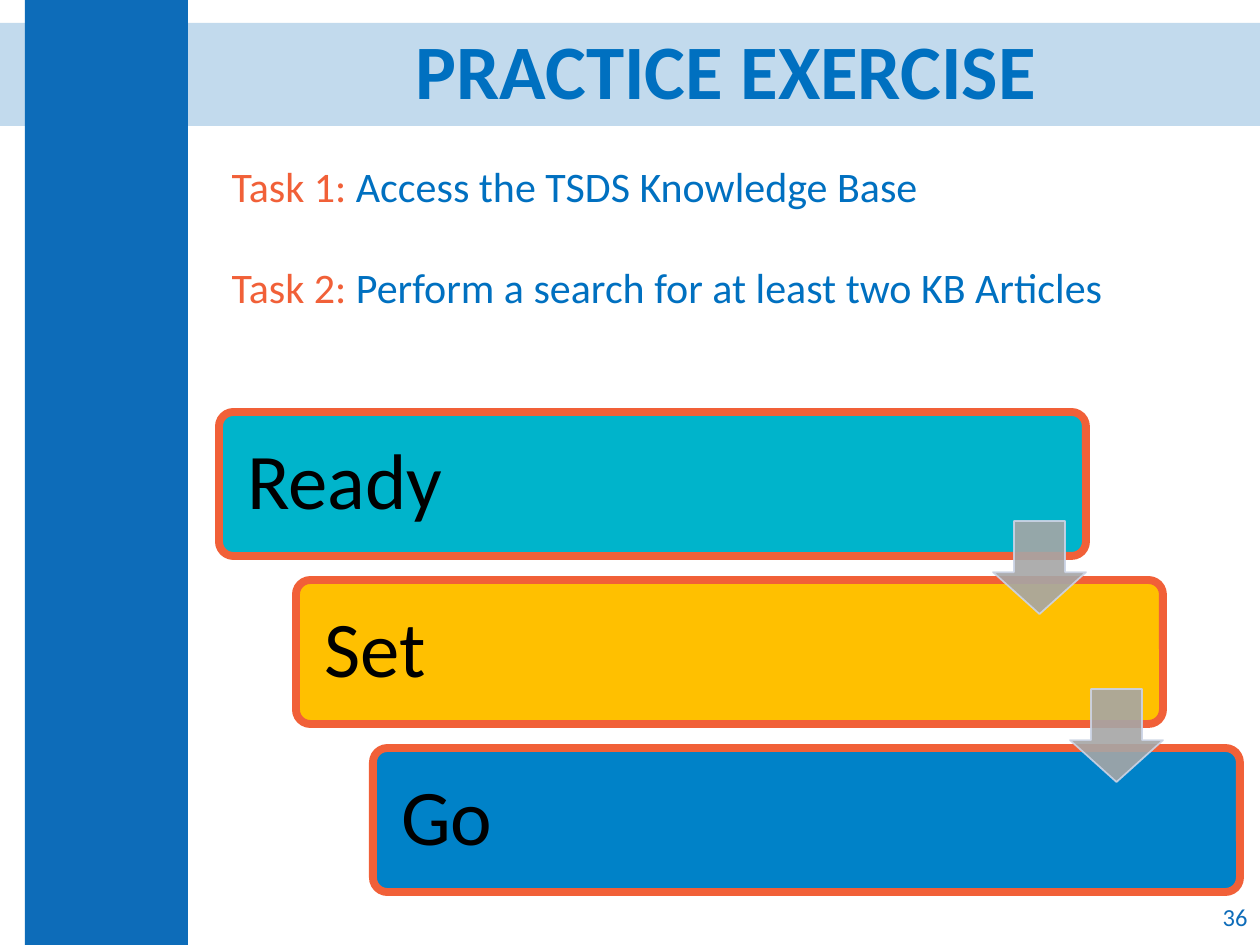
import pptx
import pptx.dml.color
import pptx.enum.shapes
import pptx.enum.text
import pptx.oxml.ns
import pptx.util
from lxml import etree

# Content
TITLE = "PRACTICE EXERCISE"
TASKS = [
    ("Task 1:", " Access the TSDS Knowledge Base"),
    ("Task 2:", " Perform a search for at least two KB Articles"),
]
STEPS = [("Ready", "00B4CB"), ("Set", "FFC000"), ("Go", "0082C8")]
PAGE_NUMBER = "36"

# Style and layout, lengths in px
FONT = "Calibri"
NAVY, BLUE, ORANGE = "0D6CB9", "0070C0", "F16038"
PX = 914400 / 126
CARD = (219, 412, 867, 144)
ARROW = (993, 521, 93, 93)
STEP_X, STEP_Y = 77, 168

SHAPES = pptx.enum.shapes.MSO_SHAPE
ALIGN = pptx.enum.text.PP_ALIGN
MIDDLE = pptx.enum.text.MSO_ANCHOR.MIDDLE


def emu(px):
    return pptx.util.Emu(round(px * PX))


def color(value):
    return pptx.dml.color.RGBColor.from_string(value)


def place(shape, left, top, width, height):
    shape.left, shape.top = emu(left), emu(top)
    shape.width, shape.height = emu(width), emu(height)


def set_opacity(shape, percent):
    for rgb in shape.element.spPr.iter(pptx.oxml.ns.qn("a:srgbClr")):
        alpha = etree.SubElement(rgb, pptx.oxml.ns.qn("a:alpha"))
        alpha.set("val", str(percent * 1000))


def add_block(kind, area, fill, line=None, line_width=0, adjust=()):
    shape = page.shapes.add_shape(kind, *map(emu, area))
    shape.shadow.inherit = False
    shape.fill.solid()
    shape.fill.fore_color.rgb = color(fill)
    if line:
        shape.line.color.rgb = color(line)
        shape.line.width = pptx.util.Pt(line_width)
    else:
        shape.line.fill.background()
    for index, value in enumerate(adjust):
        shape.adjustments[index] = value
    return shape


def add_span(para, text, size, fill, bold=False):
    span = para.add_run()
    span.text = text
    span.font.name = FONT
    span.font.size = pptx.util.Pt(size)
    span.font.bold = bold
    span.font.color.rgb = color(fill)


def prepare(frame, anchor):
    frame.word_wrap = True
    frame.auto_size = pptx.enum.text.MSO_AUTO_SIZE.NONE
    frame.vertical_anchor = anchor
    return frame.paragraphs[0]


deck = pptx.Presentation()
deck.slide_width, deck.slide_height = emu(1260), emu(945)
page = deck.slides.add_slide(deck.slide_layouts[1])
title, body = page.placeholders

# Background bands, kept behind the placeholders
band = add_block(SHAPES.RECTANGLE, (0, 23, 1260, 103), NAVY)
set_opacity(band, 25)
sidebar = add_block(SHAPES.RECTANGLE, (25, 0, 163, 945), NAVY)
for shape in (band, sidebar):
    title.element.addprevious(shape.element)

# Title
place(title, 228, 23, 996, 103)
para = prepare(title.text_frame, MIDDLE)
para.alignment = ALIGN.CENTER
para.line_spacing = 0.9
add_span(para, TITLE, 44, BLUE, bold=True)

# Task list
place(body, 219, 154, 1012, 181)
para = prepare(body.text_frame, pptx.enum.text.MSO_ANCHOR.TOP)
for index, (label, task) in enumerate(TASKS):
    if index:
        para = body.text_frame.add_paragraph()
    properties = para._p.get_or_add_pPr()
    properties.set("marL", "0")
    properties.set("indent", "0")
    etree.SubElement(properties, pptx.oxml.ns.qn("a:buNone"))
    para.space_before = pptx.util.Pt(29 if index else 0)
    add_span(para, label, 24, ORANGE)
    add_span(para, task, 24, BLUE)

# Staggered step cards
left, top, width, height = CARD
for index, (label, fill) in enumerate(STEPS):
    area = (left + index * STEP_X, top + index * STEP_Y, width, height)
    card = add_block(SHAPES.ROUNDED_RECTANGLE, area, fill, ORANGE, 4.5, [0.1])
    para = prepare(card.text_frame, MIDDLE)
    card.text_frame.margin_left = emu(24)
    para.alignment = ALIGN.LEFT
    para.line_spacing = 0.9
    add_span(para, label, 45, "000000")

# Arrows linking each card to the next
left, top, width, height = ARROW
for index in range(len(STEPS) - 1):
    area = (left + index * STEP_X, top + index * STEP_Y, width, height)
    arrow = add_block(SHAPES.DOWN_ARROW, area, "A6A6A6", "CCD4E6", 1, [0.55, 0.45])
    set_opacity(arrow, 90)

# Page number
box = page.shapes.add_textbox(*map(emu, (976, 892, 284, 50)))
para = prepare(box.text_frame, MIDDLE)
para.alignment = ALIGN.RIGHT
add_span(para, PAGE_NUMBER, 14, NAVY)

deck.save("out.pptx")
